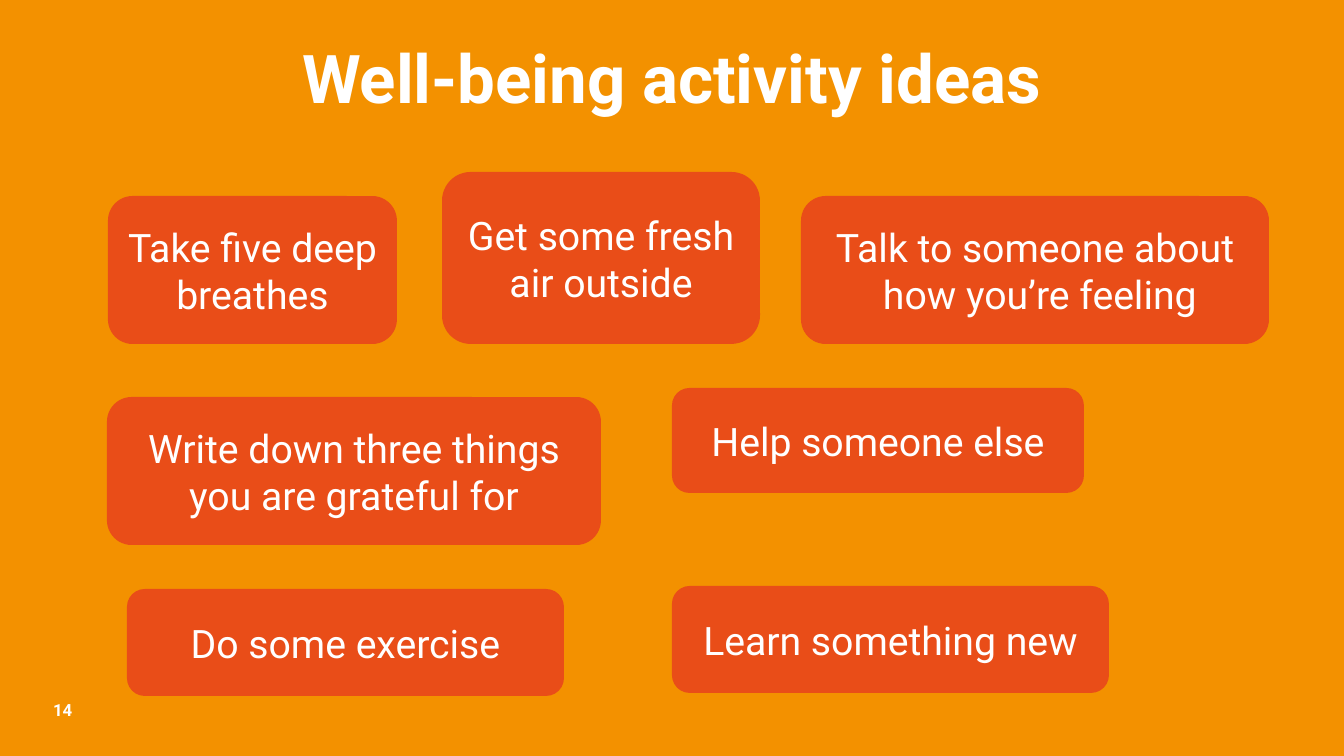
from pptx import Presentation
from pptx.dml.color import RGBColor
from pptx.enum import shapes, text
from pptx.util import Emu, Pt

SCALE = 914400 / 100.8
WHITE, ORANGE, RED = "FFFFFF", "F39100", "E94D18"
FONT = "Roboto"

IDEAS = [
    ("Take five deep breathes", 108, 196, 289, 148),
    ("Get some fresh air outside", 442, 172, 318, 172),
    ("Write down three things you are grateful for", 107, 397, 494, 148),
    ("Talk to someone about\n how you’re feeling", 801, 196, 468, 148),
    ("Help someone else", 672, 388, 412, 105),
    ("Learn something new", 672, 586, 437, 107),
    ("Do some exercise", 127, 589, 437, 107),
]


def px(*nums):
    """Turn pixel lengths into a list of EMU lengths."""
    return [Emu(round(n * SCALE)) for n in nums]


def paint(fill, color):
    fill.solid()
    fill.fore_color.rgb = RGBColor.from_string(color)


def write(frame, words, size, bold=False, align=text.PP_ALIGN.CENTER):
    frame.word_wrap = True
    frame.text = words
    for para in frame.paragraphs:
        para.alignment = align
        for run in para.runs:
            run.font.name = FONT
            run.font.size = Pt(size)
            run.font.bold = bold
            paint(run.font.fill, WHITE)


def add_title(slide, words):
    frame = slide.shapes.add_textbox(*px(219, 31, 906, 92)).text_frame
    write(frame, words, 48, bold=True)
    frame.paragraphs[0].space_after = Pt(18)


def add_number(slide, words):
    frame = slide.shapes.add_textbox(*px(53, 688, 74, 32)).text_frame
    frame.margin_left = frame.margin_right = 0
    frame.margin_top = frame.margin_bottom = 0
    frame.vertical_anchor = text.MSO_ANCHOR.BOTTOM
    write(frame, words, 12, bold=True, align=text.PP_ALIGN.LEFT)


def add_card(slide, words, *box):
    kind = shapes.MSO_SHAPE.ROUNDED_RECTANGLE
    card = slide.shapes.add_shape(kind, *px(*box))
    card.shadow.inherit = False
    paint(card.fill, RED)
    card.line.fill.background()
    card.text_frame.vertical_anchor = text.MSO_ANCHOR.MIDDLE
    write(card.text_frame, words, 28)


def main():
    deck = Presentation()
    deck.slide_width, deck.slide_height = px(1344, 756)
    slide = deck.slides.add_slide(deck.slide_layouts[6])
    paint(slide.background.fill, ORANGE)
    add_number(slide, "14")
    add_title(slide, "Well-being activity ideas")
    for idea in IDEAS:
        add_card(slide, *idea)
    deck.save("out.pptx")


if __name__ == "__main__":
    main()
